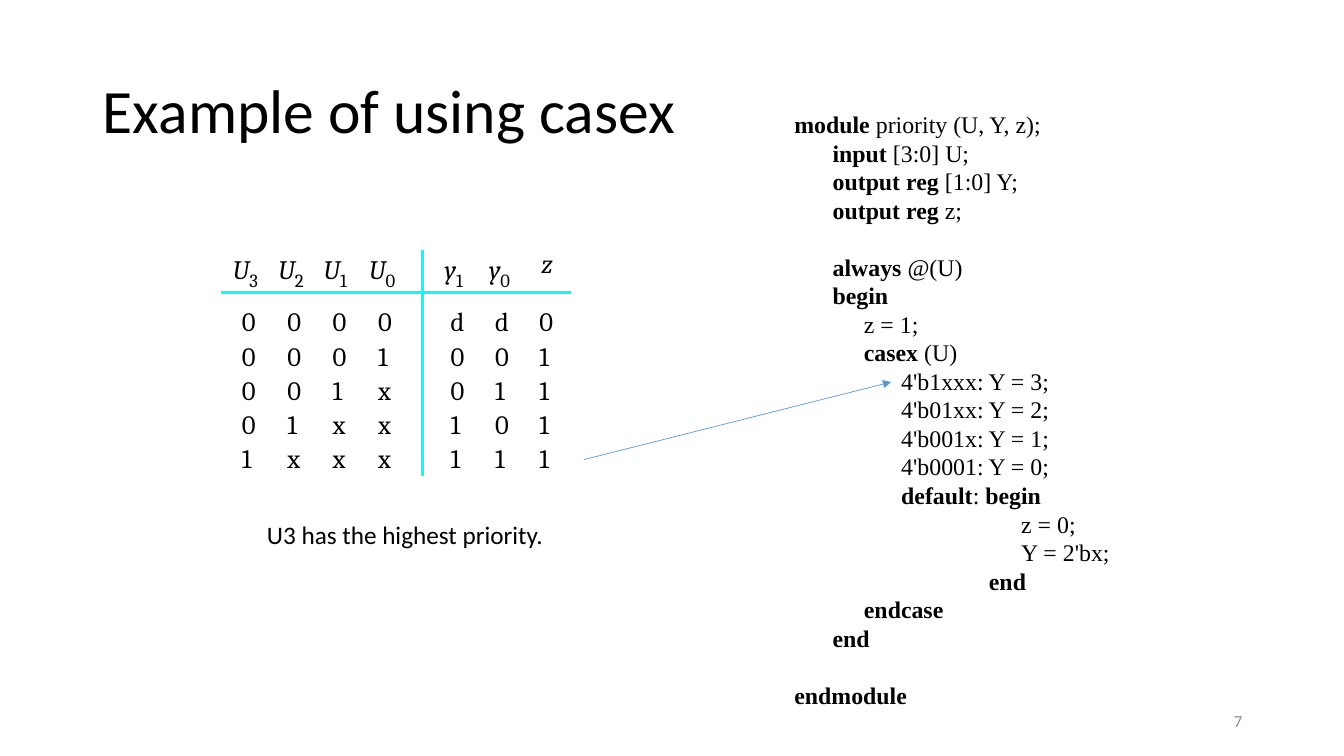
from dataclasses import dataclass
from typing import Optional

from lxml.etree import SubElement
from pptx import Presentation
from pptx.dml.color import RGBColor
from pptx.enum.shapes import MSO_CONNECTOR
from pptx.enum.text import MSO_ANCHOR, PP_ALIGN
from pptx.oxml.ns import qn
from pptx.util import Inches, Pt

BLACK = RGBColor(0x00, 0x00, 0x00)
GREY = RGBColor(0x8C, 0x8C, 0x8C)
CYAN = RGBColor(0x00, 0xFF, 0xFF)
BLUE = RGBColor(0x5B, 0x9B, 0xD5)

TABLE_LEFT, TABLE_TOP = 2.19, 2.48
HEADER_HEIGHT, ROW_HEIGHT, BODY_GAP = 0.42, 0.34, 0.14
CODE_PITCH = Pt(20.4)


@dataclass
class Column:
    symbol: str
    index: str
    width: float
    header_inset: float
    body_inset: float
    values: str


@dataclass
class CodeLine:
    indent: float
    text: str
    gap_before: bool = False


@dataclass
class Line:
    x1: float
    y1: float
    x2: float
    y2: float
    color: RGBColor
    width: float
    arrow: bool = False


COLUMNS = [
    Column("U", "3", 0.45, 0.12, 0.21, "00001"),
    Column("U", "2", 0.45, 0.12, 0.21, "0001x"),
    Column("U", "1", 0.45, 0.12, 0.21, "001xx"),
    Column("U", "0", 0.65, 0.12, 0.21, "01xxx"),
    Column("y", "1", 0.58, 0.22, 0.28, "d0011"),
    Column("y", "0", 0.44, 0.08, 0.14, "d0101"),
    Column("z", "", 0.45, 0.16, 0.14, "01111"),
]

CODE = [
    CodeLine(0, "*module* priority (U, Y, z);"),
    CodeLine(0.38, "*input* [3:0] U;"),
    CodeLine(0.38, "*output reg* [1:0] Y;"),
    CodeLine(0.38, "*output reg* z;"),
    CodeLine(0.38, "*always *@(U)", True),
    CodeLine(0.38, "*begin*"),
    CodeLine(0.69, "z = 1;"),
    CodeLine(0.69, "*casex *(U)"),
    CodeLine(1.06, "4'b1xxx: Y = 3;"),
    CodeLine(1.06, "4'b01xx: Y = 2;"),
    CodeLine(1.06, "4'b001x: Y = 1;"),
    CodeLine(1.06, "4'b0001: Y = 0;"),
    CodeLine(1.06, "*default*: *begin*"),
    CodeLine(2.25, "z = 0;"),
    CodeLine(2.25, "Y = 2'bx;"),
    CodeLine(1.93, "*end*"),
    CodeLine(0.69, "*endcase*"),
    CodeLine(0.38, "*end*"),
    CodeLine(0, "*endmodule*", True),
]

LINES = [
    Line(2.19, 2.9, 5.66, 2.9, CYAN, 1.88),
    Line(4.19, 4.72, 4.19, 2.48, CYAN, 1.88),
    Line(5.79, 4.56, 8.84, 3.79, BLUE, 0.5, True),
]


def style(p, font: str, size: float, color: RGBColor = BLACK) -> None:
    p.font.name, p.font.size = font, Pt(size)
    p.font.color.rgb = color


def add_label(s, text: str, left: float, top: float, width: float, height: float,
              size: float, color: RGBColor = BLACK,
              align: Optional[PP_ALIGN] = None) -> None:
    tf = s.shapes.add_textbox(
        Inches(left), Inches(top), Inches(width), Inches(height)).text_frame
    tf.word_wrap = align is not None
    tf.vertical_anchor = MSO_ANCHOR.MIDDLE
    p = tf.paragraphs[0]
    p.text, p.alignment = text, align
    style(p, "Calibri", size, color)


def add_code(s) -> None:
    tf = s.shapes.add_textbox(
        Inches(7.78), Inches(1.04), Inches(4.31), Inches(6.11)).text_frame
    tf.word_wrap = True
    for i, line in enumerate(CODE):
        p = tf.add_paragraph() if i else tf.paragraphs[0]
        style(p, "Times New Roman", 17)
        p.line_spacing = CODE_PITCH
        if line.gap_before:
            p.space_before = CODE_PITCH
        p._p.get_or_add_pPr().set("marL", str(Inches(line.indent)))
        for part, text in enumerate(line.text.split("*")):
            if text:
                r = p.add_run()
                r.text, r.font.bold = text, part % 2 == 1


def fill_cell(cell, text: str, inset: float, top: float = 0):
    cell.fill.background()
    cell.margin_left, cell.margin_top = Inches(inset), Inches(top)
    cell.margin_right = cell.margin_bottom = 0
    p = cell.text_frame.paragraphs[0]
    style(p, "Cambria", 19)
    r = p.add_run()
    r.text = text
    return p


def add_truth_table(s) -> None:
    count = len(COLUMNS[0].values)
    heights = [HEADER_HEIGHT, ROW_HEIGHT + BODY_GAP] + [ROW_HEIGHT] * (count - 1)
    table = s.shapes.add_table(
        count + 1, len(COLUMNS), Inches(TABLE_LEFT), Inches(TABLE_TOP),
        Inches(sum(c.width for c in COLUMNS)), Inches(sum(heights))).table
    table.first_row = table.horz_banding = False
    for row, height in zip(table.rows, heights):
        row.height = Inches(height)
    for i, column in enumerate(COLUMNS):
        table.columns[i].width = Inches(column.width)
        p = fill_cell(table.cell(0, i), column.symbol, column.header_inset)
        p.runs[0].font.italic = True
        if column.index:
            r = p.add_run()
            r.text, r.font.size = column.index, Pt(23)
            r.font._element.set("baseline", "-25000")
        for j, value in enumerate(column.values):
            fill_cell(table.cell(j + 1, i), value, column.body_inset,
                      0 if j else BODY_GAP)


def add_line(s, line: Line) -> None:
    c = s.shapes.add_connector(
        MSO_CONNECTOR.STRAIGHT, Inches(line.x1), Inches(line.y1),
        Inches(line.x2), Inches(line.y2))
    c.line.color.rgb, c.line.width = line.color, Pt(line.width)
    if line.arrow:
        SubElement(c.line._get_or_add_ln(), qn("a:tailEnd"), type="triangle")
    SubElement(c._element.spPr, qn("a:effectLst"))


def main() -> None:
    prs = Presentation()
    prs.slide_width, prs.slide_height = Inches(13.33), Inches(7.5)
    s = prs.slides.add_slide(prs.slide_layouts[5])
    title = s.shapes.title
    title.left, title.top = Inches(0.92), Inches(0.4)
    title.width, title.height = Inches(11.5), Inches(1.45)
    title.text_frame.vertical_anchor = MSO_ANCHOR.MIDDLE
    p = title.text_frame.paragraphs[0]
    p.text, p.alignment, p.line_spacing = "Example of using casex", PP_ALIGN.LEFT, 0.9
    style(p, "Calibri", 44)
    add_label(s, "7", 9.42, 6.95, 3, 0.4, 12, GREY, PP_ALIGN.RIGHT)
    add_code(s)
    add_truth_table(s)
    for line in LINES:
        add_line(s, line)
    add_label(s, "U3 has the highest priority.", 2.55, 5.1, 2.97, 0.4, 18)
    prs.save("out.pptx")


if __name__ == "__main__":
    main()
